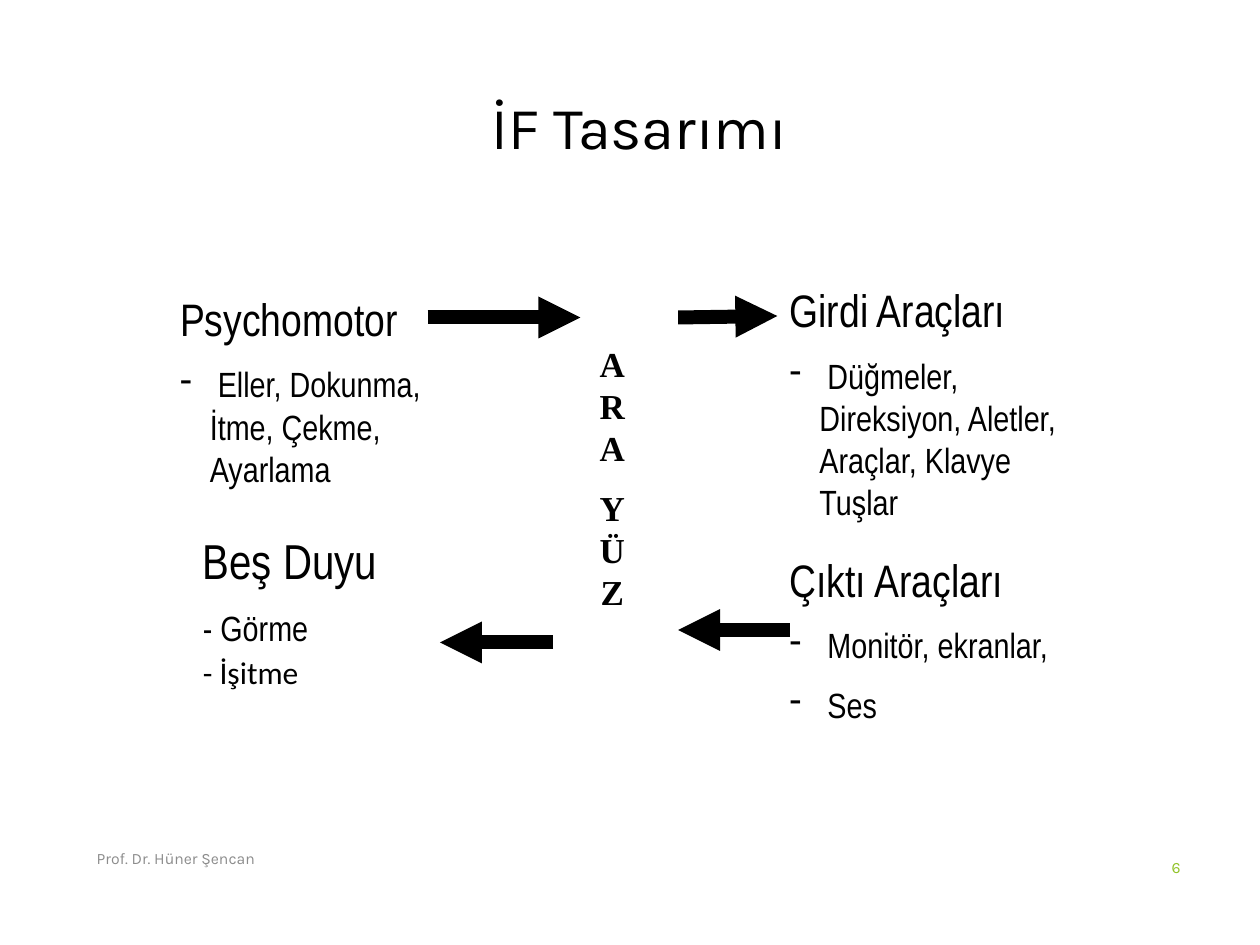
from lxml.etree import SubElement as Sub
from pptx import Presentation as Deck
from pptx.dml.color import RGBColor as Color
from pptx.enum.shapes import MSO_CONNECTOR as Link
from pptx.enum.text import MSO_ANCHOR as Anchor, MSO_AUTO_SIZE as Fit, PP_ALIGN as Align
from pptx.oxml.ns import qn
from pptx.util import Cm, Pt

HUES = {"ink": "000000", "gray": "8C8C8C", "green": "90C226"}
FONTS = {
    "title": {"name": "Karla", "size": Pt(34)},
    "foot": {"name": "Karla", "size": Pt(9)},
    "head": {"name": "Arial Narrow", "size": Pt(26)},
    "big": {"name": "Arial Narrow", "size": Pt(28)},
    "item": {"name": "Arial Narrow", "size": Pt(20)},
    "mid": {"name": "Times New Roman", "size": Pt(20), "bold": True},
}

deck = Deck()
deck.slide_width, deck.slide_height = Cm(25.4), Cm(19.05)
slide = deck.slides.add_slide(deck.slide_layouts[6])


def add_text(spot, rows, hue="ink", align=Align.LEFT, **frame):
    box = slide.shapes.add_textbox(*map(Cm, spot)).text_frame
    for key, val in {"word_wrap": True, **frame}.items():
        setattr(box, key, val)
    for i, (style, text, *dash) in enumerate(rows):
        para = box.paragraphs[0] if i == 0 else box.add_paragraph()
        para.text = text
        para.alignment = align
        if i:
            para.space_before = Pt(10)
        if style in ("item", "mid"):
            para.line_spacing = Pt(24)
        if dash:
            props = para._p.get_or_add_pPr()
            props.set("marL", str(Cm(0.6)))
            props.set("indent", str(-Cm(0.6)))
            Sub(props, qn("a:buFontTx"))
            Sub(props, qn("a:buChar"), char=dash[0])
        font = para.runs[0].font
        for key, val in FONTS[style].items():
            setattr(font, key, val)
        font.color.rgb = Color.from_string(HUES[hue])


add_text((1.7, 1.7, 22.38, 2.49), [("title", "İF Tasarımı")], align=Align.CENTER)
add_text((1.7, 16.79, 12.85, 1.01), [("foot", "Prof. Dr. Hüner Şencan")], "gray",
         vertical_anchor=Anchor.MIDDLE)
add_text((22.63, 16.97, 1.42, 1.01), [("foot", "6")], "green", Align.RIGHT,
         vertical_anchor=Anchor.MIDDLE)

panels = [
    ((3.38, 5.74, 6.78, 4.78), Align.LEFT,
     [("head", "Psychomotor"), ("item", " Eller, Dokunma, İtme, Çekme, Ayarlama", "-")]),
    ((15.67, 5.56, 6.35, 5.64), Align.LEFT,
     [("head", "Girdi Araçları"),
      ("item", " Düğmeler, Direksiyon, Aletler, Araçlar, Klavye Tuşlar", "-")]),
    ((11.81, 6.78, 1.07, 5.82), Align.CENTER, [("mid", "ARA"), ("mid", "YÜZ")]),
    ((3.84, 10.57, 5.33, 3.58), Align.LEFT,
     [("big", "Beş Duyu"), ("item", "- Görme\v- İşitme")]),
    ((15.67, 11, 6.35, 5.21), Align.LEFT,
     [("head", "Çıktı Araçları"), ("item", " Monitör, ekranlar,", "-"), ("item", " Ses", "-")]),
]
for spot, align, rows in panels:
    add_text(spot, rows, align=align, auto_size=Fit.SHAPE_TO_FIT_TEXT)

arrows = [
    (8.62, 6.4, 11.7, 6.4),
    (13.67, 6.4, 15.67, 6.37),
    (15.93, 12.7, 13.67, 12.7),
    (11.15, 12.95, 8.87, 12.95),
]
for ends in arrows:
    arrow = slide.shapes.add_connector(Link.STRAIGHT, *map(Cm, ends))
    arrow.line.width = Pt(8)
    arrow.line.color.rgb = Color.from_string(HUES["ink"])
    Sub(arrow.line._get_or_add_ln(), qn("a:tailEnd"), type="triangle")
    Sub(arrow._element.spPr, qn("a:effectLst"))

deck.save("out.pptx")
